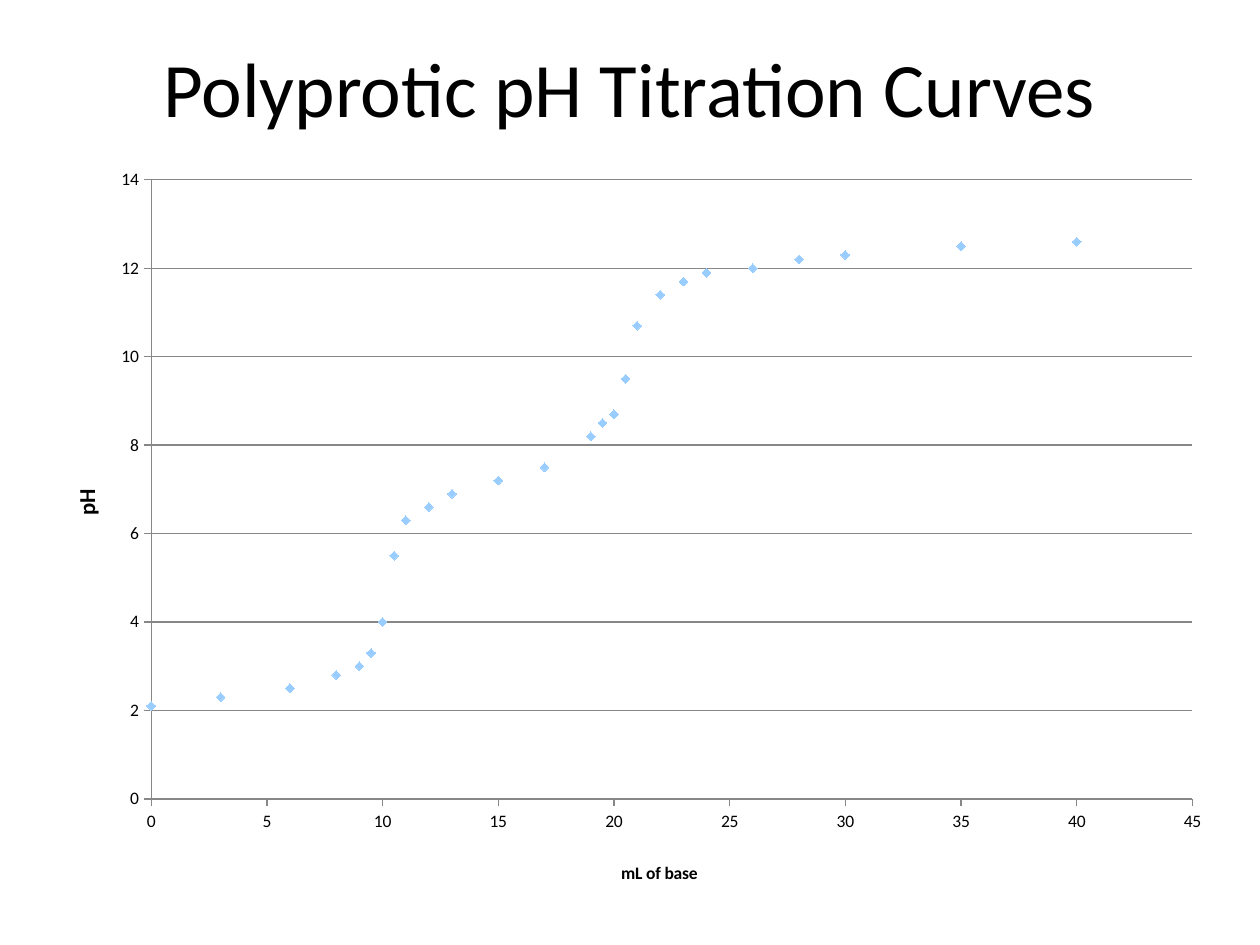
from pptx import Presentation
from pptx.chart.data import XyChartData
from pptx.dml.color import RGBColor
from pptx.enum.chart import XL_CHART_TYPE as ChartType, XL_MARKER_STYLE as Marker
from pptx.enum.chart import XL_TICK_MARK as TickMark
from pptx.enum.text import MSO_ANCHOR as Anchor, PP_ALIGN as Align
from pptx.oxml.ns import qn
from pptx.util import Inches, Pt
from lxml.etree import SubElement

# Content
TITLE = "Polyprotic pH Titration Curves"
SERIES = "Series 1"
POINTS = [  # mL of base, pH
    (0, 2.1), (3, 2.3), (6, 2.5), (8, 2.8), (9, 3), (9.5, 3.3), (10, 4),
    (10.5, 5.5), (11, 6.3), (12, 6.6), (13, 6.9), (15, 7.2), (17, 7.5),
    (19, 8.2), (19.5, 8.5), (20, 8.7), (20.5, 9.5), (21, 10.7), (22, 11.4),
    (23, 11.7), (24, 11.9), (26, 12), (28, 12.2), (30, 12.3), (35, 12.5),
    (40, 12.6),
]
THEME = dict(
    font="Calibri", text=RGBColor(0, 0, 0), line=RGBColor(0x87, 0x87, 0x87),
    marker=RGBColor(0x99, 0xCC, 0xFF), title=44, labels=10, ph_title=13,
)
# Axis title, size, highest value, step, place as fractions of the chart
AXES = {
    "category_axis": ("mL of base", THEME["labels"], 45, 5, dict(x=0.49, y=0.94)),
    "value_axis": ("pH", THEME["ph_title"], 14, 2, dict(x=0.03, y=0.44)),
}
PLOT = dict(x=0.1, y=0.03, w=0.87, h=0.83)


def write(frame, text, size, bold=False, align=Align.CENTER):
    paragraph = frame.paragraphs[0]
    paragraph.alignment = align
    run = paragraph.add_run()
    run.text = text
    font = run.font
    font.name, font.size, font.bold = THEME["font"], Pt(size), bold
    font.color.rgb = THEME["text"]


def place(element, index, fractions, inner=False):
    """Give a chart part a manual layout."""
    for old in element.findall(qn("c:layout")):
        element.remove(old)
    layout = SubElement(element, qn("c:layout"))
    element.insert(index, layout)
    manual = SubElement(layout, qn("c:manualLayout"))
    if inner:
        SubElement(manual, qn("c:layoutTarget")).set("val", "inner")
    for key in "xy":
        SubElement(manual, qn(f"c:{key}Mode")).set("val", "edge")
    for key, value in fractions.items():
        SubElement(manual, qn(f"c:{key}")).set("val", str(value))


def format_axis(axis, text, size, maximum, step, position):
    axis.minimum_scale, axis.maximum_scale, axis.major_unit = 0, maximum, step
    axis.major_tick_mark, axis.minor_tick_mark = TickMark.OUTSIDE, TickMark.NONE
    axis.tick_labels.number_format = "General"
    axis.tick_labels.number_format_is_linked = False
    axis.format.line.color.rgb = THEME["line"]
    axis.format.line.width = Pt(0.75)
    write(axis.axis_title.text_frame, text, size, bold=True)
    place(axis.axis_title._element, 1, position)


def add_curve(slide):
    data = XyChartData()
    series_data = data.add_series(SERIES)
    for volume, ph in POINTS:
        series_data.add_data_point(volume, ph)
    chart = slide.shapes.add_chart(
        ChartType.XY_SCATTER, Inches(0.25), Inches(1.25), Inches(9.5), Inches(5.92), data
    ).chart
    chart.has_title = chart.has_legend = False
    chart.font.name, chart.font.size = THEME["font"], Pt(THEME["labels"])
    chart.font.color.rgb = THEME["text"]
    place(chart._chartSpace.chart.plotArea, 0, PLOT, inner=True)

    # Axes and gridlines
    for name, settings in AXES.items():
        format_axis(getattr(chart, name), *settings)
    chart.category_axis.has_major_gridlines = False
    value_axis = chart.value_axis
    value_axis.axis_title.text_frame._txBody.bodyPr.set("rot", "-5400000")
    value_axis.has_major_gridlines = True
    grid = value_axis.major_gridlines.format.line
    grid.color.rgb, grid.width = THEME["line"], Pt(0.75)

    # Markers only
    chart.plots[0].vary_by_categories = False
    series = chart.plots[0].series[0]
    series.smooth = False
    series.format.line.fill.background()
    series.marker.style, series.marker.size = Marker.DIAMOND, 5
    series.marker.format.fill.solid()
    series.marker.format.fill.fore_color.rgb = THEME["marker"]
    series.marker.format.line.color.rgb = THEME["marker"]


def main():
    presentation = Presentation()
    presentation.slide_width, presentation.slide_height = Inches(10), Inches(7.5)
    slide = presentation.slides.add_slide(presentation.slide_layouts[6])

    # Title
    frame = slide.shapes.add_textbox(
        Inches(0.5), Inches(0.3), Inches(9), Inches(0.78)
    ).text_frame
    frame.word_wrap, frame.vertical_anchor = True, Anchor.MIDDLE
    write(frame, TITLE, THEME["title"])

    add_curve(slide)
    presentation.save("out.pptx")


if __name__ == "__main__":
    main()
